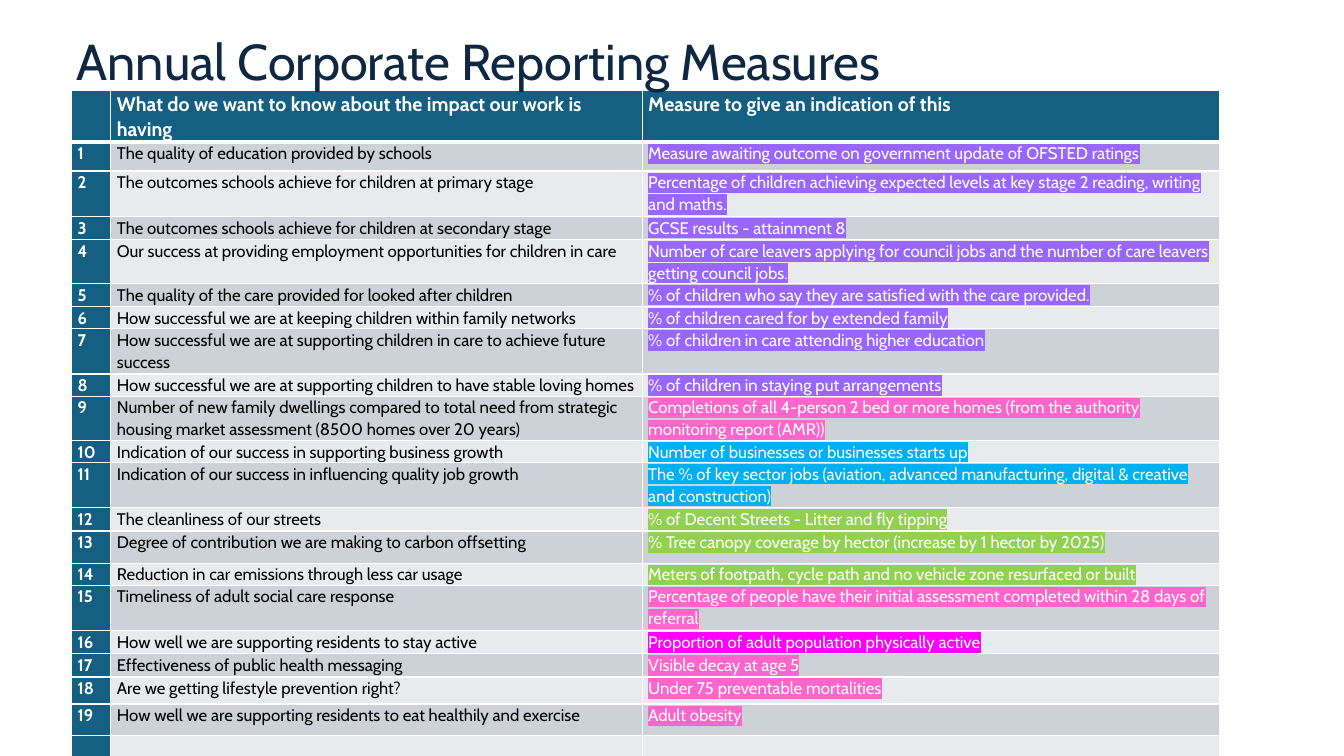
import pptx
import pptx.util
import pptx.dml.color
import pptx.enum.text
import pptx.oxml
import pptx.oxml.ns
from dataclasses import dataclass

PX = 9144  # one px is a hundredth of an inch


@dataclass(frozen=True)
class Theme:
    face: str = "Cabin"
    title: int = 36
    head: int = 14
    body: int = 12
    navy: str = "0E2841"
    teal: str = "156082"
    dark: str = "CCD2D8"
    light: str = "E8EAED"
    white: str = "FFFFFF"
    black: str = "000000"
    violet: str = "9966FF"
    pink: str = "FF66CC"
    blue: str = "00B0F0"
    green: str = "92D050"
    magenta: str = "FF00FF"


T = Theme()

HEADS = ("", "What do we want to know about the impact our work is having",
         "Measure to give an indication of this")

# Row height, question, measure, highlight
ITEMS = [
    (29, "The quality of education provided by schools",
     "Measure awaiting outcome on government update of OFSTED ratings", T.violet),
    (45, "The outcomes schools achieve for children at primary stage",
     "Percentage of children achieving expected levels at key stage 2 reading, writing and maths.", T.violet),
    (23, "The outcomes schools achieve for children at secondary stage",
     "GCSE results - attainment 8", T.violet),
    (43, "Our success at providing employment opportunities for children in care",
     "Number of care leavers applying for council jobs and the number of care leavers getting council jobs.",
     T.violet),
    (23, "The quality of the care provided for looked after children",
     "% of children who say they are satisfied with the care provided.", T.violet),
    (21, "How successful we are at keeping children within family networks",
     "% of children cared for by extended family", T.violet),
    (45, "How successful we are at supporting children in care to achieve future success",
     "% of children in care attending higher education", T.violet),
    (22, "How successful we are at supporting children to have stable loving homes",
     "% of children in staying put arrangements", T.violet),
    (44, "Number of new family dwellings compared to total need from strategic "
     "housing market assessment (8500 homes over 20 years)",
     "Completions of all 4-person 2 bed or more homes (from the authority monitoring report (AMR))", T.pink),
    (8, "Indication of our success in supporting business growth",
     "Number of businesses or businesses starts up", T.blue),
    (45, "Indication of our success in influencing quality job growth",
     "The % of key sector jobs (aviation, advanced manufacturing, digital & creative and construction)", T.blue),
    (23, "The cleanliness of our streets",
     "% of Decent Streets - Litter and fly tipping", T.green),
    (32, "Degree of contribution we are making to carbon offsetting",
     "% Tree canopy coverage by hector (increase by 1 hector by 2025)", T.green),
    (21, "Reduction in car emissions through less car usage",
     "Meters of footpath, cycle path and no vehicle zone resurfaced or built", T.green),
    (45, "Timeliness of adult social care response",
     "Percentage of people have their initial assessment completed within 28 days of referral", T.pink),
    (23, "How well we are supporting residents to stay active",
     "Proportion of adult population physically active", T.magenta),
    (23, "Effectiveness of public health messaging",
     "Visible decay at age 5", T.pink),
    (27, "Are we getting lifestyle prevention right?",
     "Under 75 preventable mortalities", T.pink),
    (31, "How well we are supporting residents to eat healthily and exercise",
     "Adult obesity", T.pink),
]


def rgb(code):
    return pptx.dml.color.RGBColor.from_string(code)


def style(para, size, color, bold=None):
    for run in para.runs:
        run.font.size = pptx.util.Pt(size)
        run.font.color.rgb = rgb(color)
        run.font.name = T.face
        run.font.bold = bold


def mark(run, color):
    """Highlight a run; the element belongs just before the typeface."""
    light = pptx.oxml.parse_xml(
        f'<a:highlight {pptx.oxml.ns.nsdecls("a")}><a:srgbClr val="{color}"/></a:highlight>')
    run.font._element.find(pptx.oxml.ns.qn("a:latin")).addprevious(light)


def edge(cell, base):
    """White cell borders, with the given width at the bottom."""
    props = cell._tc.get_or_add_tcPr()
    for spot, (side, width) in enumerate((("L", 1), ("R", 1), ("T", 1), ("B", base))):
        props.insert(spot, pptx.oxml.parse_xml(
            f'<a:ln{side} {pptx.oxml.ns.nsdecls("a")} w="{pptx.util.Pt(width)}">'
            f'<a:solidFill><a:srgbClr val="{T.white}"/></a:solidFill></a:ln{side}>'))


def put(cell, text, fill, size, color, bold=False, base=1):
    cell.margin_left = cell.margin_right = 6 * PX
    cell.margin_top = cell.margin_bottom = 0
    cell.fill.solid()
    cell.fill.fore_color.rgb = rgb(fill)
    edge(cell, base)
    para = cell.text_frame.paragraphs[0]
    para.line_spacing = 1.07
    para.space_after = pptx.util.Pt(8)
    if text:
        para.text = text
        style(para, size, color, bold)


def grid(slide, left, top, width, height):
    """Table of measures: heading, numbered rows, one blank row."""
    frame = slide.shapes.add_table(len(ITEMS) + 2, 3, left * PX, top * PX,
                                   width * PX, height * PX)
    table = frame.table
    for col, share in zip(table.columns, (39, 527, width - 566)):
        col.width = share * PX
    tall = [23] + [item[0] for item in ITEMS] + [23]
    for row, size in zip(table.rows, tall):
        row.height = size * PX
    frame.height = height * PX

    # Heading
    for col, text in enumerate(HEADS):
        put(table.cell(0, col), text, T.teal, T.head, T.white, True, 3)

    # Numbered rows, then the blank one
    rows = [(str(n), ask, gauge, tone) for n, (_, ask, gauge, tone) in enumerate(ITEMS, 1)]
    for n, (num, ask, gauge, tone) in enumerate(rows + [("", "", "", None)], 1):
        band = T.dark if n % 2 else T.light
        put(table.cell(n, 0), num, T.teal, T.body, T.white, True)
        put(table.cell(n, 1), ask, band, T.body, T.black)
        put(table.cell(n, 2), gauge, band, T.body, T.white)
        for run in table.cell(n, 2).text_frame.paragraphs[0].runs:
            mark(run, tone)


def head(slide, left, top, width, height):
    """Slide title, brought in front of the table."""
    title = slide.shapes.title
    title.left, title.top = left * PX, top * PX
    title.width, title.height = width * PX, height * PX
    box = title.text_frame
    box.text = "Annual Corporate Reporting Measures"
    box.word_wrap = True
    box.auto_size = pptx.enum.text.MSO_AUTO_SIZE.NONE
    box.vertical_anchor = pptx.enum.text.MSO_ANCHOR.MIDDLE
    para = box.paragraphs[0]
    para.alignment = pptx.enum.text.PP_ALIGN.LEFT
    para.line_spacing = 0.9
    style(para, T.title, T.navy)
    title.element.getparent().append(title.element)


def main():
    deck = pptx.Presentation()
    deck.slide_width, deck.slide_height = 1333 * PX, 750 * PX
    slide = deck.slides.add_slide(deck.slide_layouts[5])
    grid(slide, 71, 90, 1139, 679)
    head(slide, 66, -9, 1147, 145)
    deck.save("out.pptx")


if __name__ == "__main__":
    main()
